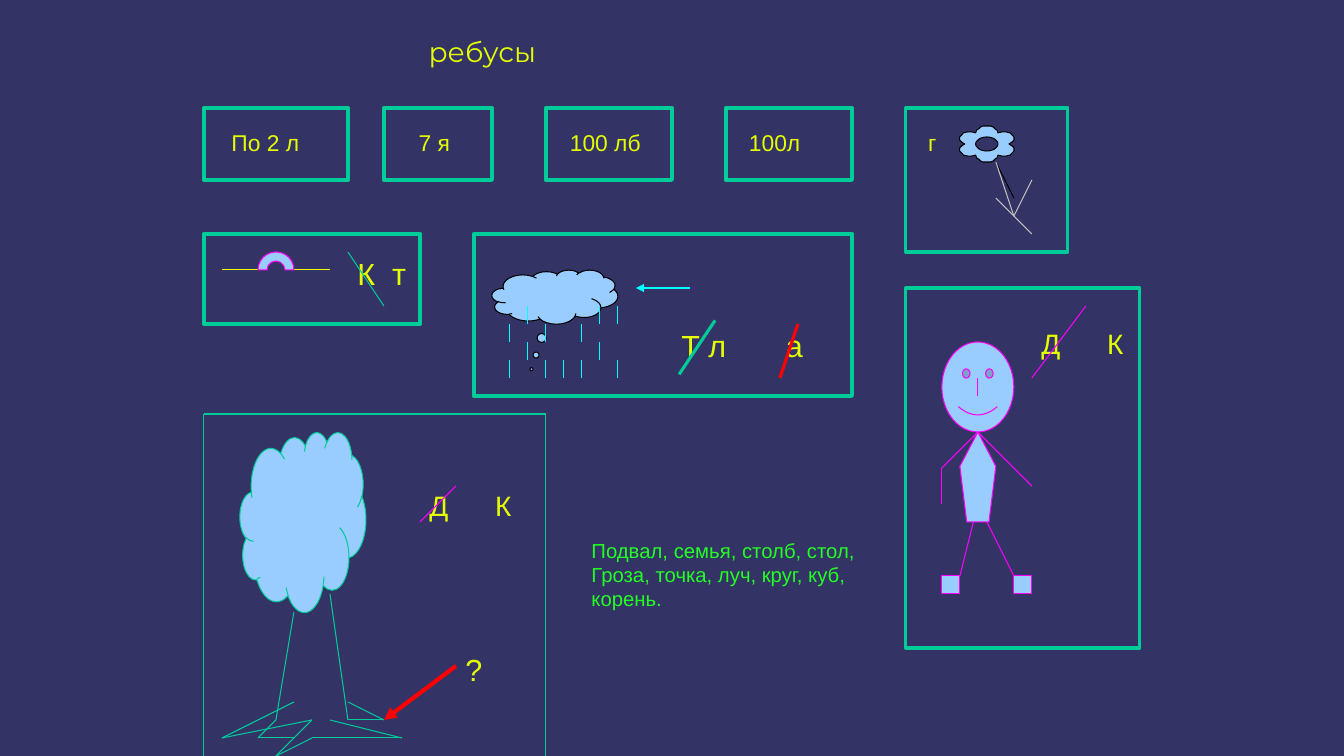
from dataclasses import dataclass

from lxml import etree
from pptx import Presentation
from pptx import util as u
from pptx.dml.color import RGBColor
from pptx.enum import shapes, text
from pptx.oxml.ns import qn

STEP = 19.05 / 42
LEFT = 5.14


@dataclass(frozen=True)
class Theme:
    back: str = "333366"
    teal: str = "00CC99"
    blue: str = "99CCFF"
    pink: str = "FF00FF"
    lime: str = "E6FF00"
    green: str = "23FF23"
    cyan: str = "00FFFF"
    yellow: str = "FFFF00"
    gray: str = "C0C0C0"
    black: str = "000000"
    red: str = "FF0000"
    font: str = "Arial"
    head: str = "Montserrat"
    big: float = 21.8
    mid: float = 20
    label: float = 16.3
    small: float = 14.5
    thin: float = 0.75
    bold: float = 2.25
    thick: float = 3


def rgb(code):
    return RGBColor.from_string(code)


def across(col):
    return u.Cm(LEFT + col * STEP)


def down(row):
    return u.Cm(row * STEP)


def span(count):
    return u.Cm(count * STEP)


class Board:
    def __init__(self, slide, theme):
        self.slide = slide
        self.theme = theme
        fill = slide.background.fill
        fill.solid()
        fill.fore_color.rgb = rgb(theme.back)

    def paint(self, item, fill, color, width):
        item.shadow.inherit = False
        if fill:
            item.fill.solid()
            item.fill.fore_color.rgb = rgb(fill)
        else:
            item.fill.background()
        item.line.color.rgb = rgb(color)
        item.line.width = u.Pt(width)

    def shape(self, kind, col, row, wide, high, color, fill=None, width=None):
        item = self.slide.shapes.add_shape(
            kind, across(col), down(row), span(wide), span(high))
        self.paint(item, fill, color, width or self.theme.thin)
        return item

    def frame(self, col, row, wide, high, width):
        self.shape(shapes.MSO_SHAPE.RECTANGLE, col, row, wide, high,
                   self.theme.teal, width=width)

    def line(self, start, end, color, width=None, arrow=False):
        item = self.slide.shapes.add_connector(
            shapes.MSO_CONNECTOR.STRAIGHT, across(start[0]), down(start[1]),
            across(end[0]), down(end[1]))
        item.line.color.rgb = rgb(color)
        item.line.width = u.Pt(width or self.theme.thin)
        props = item._element.spPr
        if arrow:
            etree.SubElement(props.find(qn("a:ln")), qn("a:tailEnd"), type="triangle")
        etree.SubElement(props, qn("a:effectLst"))

    def lines(self, pairs, color):
        for start, end in pairs:
            self.line(start, end, color)

    def outline(self, rings, color, fill):
        first, *rest = [[(across(x), down(y)) for x, y in ring] for ring in rings]
        build = self.slide.shapes.build_freeform(*first[0])
        build.add_line_segments(first[1:], close=True)
        for ring in rest:
            build.move_to(*ring[0])
            build.add_line_segments(ring[1:], close=True)
        self.paint(build.convert_to_shape(), fill, color, self.theme.thin)

    def text(self, words, col, row, wide=4, high=2, size=None, color=None,
             font=None, lead=0.98):
        box = self.slide.shapes.add_textbox(
            across(col), down(row), span(wide), span(high)).text_frame
        box.word_wrap = True
        box.vertical_anchor = text.MSO_ANCHOR.TOP
        box.margin_left = box.margin_right = u.Cm(0.24)
        box.margin_top = box.margin_bottom = u.Cm(0.11)
        box.text = words
        for para in box.paragraphs:
            para.line_spacing = lead
            para.font.size = u.Pt(size or self.theme.big)
            para.font.name = font or self.theme.font
            para.font.color.rgb = rgb(color or self.theme.lime)


def frames(board):
    t = board.theme
    for col, wide in ((0, 8), (10, 6), (19, 7), (29, 7)):
        board.frame(col, 6, wide, 4, t.thick)
    board.frame(39, 6, 9, 8, t.bold)
    board.frame(0, 13, 12, 5, t.thick)
    board.frame(15, 13, 21, 9, t.thick)
    board.frame(39, 16, 13, 20, t.bold)
    board.lines((((0, 23), (19, 23)), ((0, 23), (0, 42)), ((19, 23), (19, 42))), t.teal)


def flower(board):
    t = board.theme
    arc = [(1.23, 0), (1.4, 0.11), (1.51, 0.22), (1.51, 0.39), (1.4, 0.5),
           (1.29, 0.62), (1.06, 0.67), (0.84, 0.67), (0.62, 0.62),
           (0.56, 0.78), (0.45, 0.84), (0.34, 0.95), (0.22, 1), (0, 1)]
    hole = [(0.62, 0), (0.6, 0.1), (0.52, 0.2), (0.38, 0.31), (0.2, 0.37), (0, 0.39)]
    rings = []
    for part in (arc, hole):
        half = part + [(-x, y) for x, y in part[-2::-1]]
        ring = half + [(x, -y) for x, y in half[-2:0:-1]]
        rings.append([(43.5 + x, 8 + y) for x, y in ring])
    board.outline(rings, t.black, t.blue)
    board.line((44, 9), (45, 11), t.black)
    board.lines((((44, 9), (45, 12)), ((45, 12), (46, 10)), ((44, 11), (46, 13))), t.gray)


def arch(board):
    t = board.theme
    board.lines((((1, 15), (3, 15)), ((5, 15), (7, 15))), t.yellow)
    board.shape(shapes.MSO_SHAPE.BLOCK_ARC, 3, 14, 2, 2, t.pink, t.blue)
    board.text("К", 8, 14)
    board.text("т", 9.93, 14)
    board.line((8, 14), (10, 17), t.teal)


def storm(board):
    t = board.theme
    cloud = board.shape(shapes.MSO_SHAPE.CLOUD_CALLOUT, 16, 15, 7, 3, t.black, t.blue)
    cloud.adjustments[0] = -0.186
    cloud.adjustments[1] = 1.337
    rain = {17: (18, 22, 23), 18: (17, 19, 21), 19: (18, 22), 20: (17, 19, 20, 21, 23)}
    for row, cols in rain.items():
        board.lines([((col, row), (col, row + 1)) for col in cols], t.cyan)
    board.line((27, 16), (24, 16), t.cyan, arrow=True)
    board.text("Т л", 26, 18)
    board.text("а", 31.8, 18)
    board.line((28.4, 17.8), (26.4, 20.8), t.teal, t.bold)
    board.line((33, 18), (32, 21), t.red, t.bold)


def letters(board, col, row):
    board.text("Д", col, row, size=board.theme.mid)
    board.text("К", col + 3.65, row, size=board.theme.mid)


def person(board):
    t = board.theme
    kind = shapes.MSO_SHAPE
    board.shape(kind.SMILEY_FACE, 41, 19, 4, 5, t.pink, t.blue)
    board.lines((((43, 22), (43, 21)), ((43, 24), (41, 26)), ((41, 26), (41, 28)),
                 ((43, 24), (46, 27)), ((43, 28), (42, 32)), ((43, 28), (45, 32))), t.pink)
    for col in (41, 45):
        board.shape(kind.RECTANGLE, col, 32, 1, 1, t.pink, t.blue)
    board.shape(kind.REGULAR_PENTAGON, 42, 24, 2, 5, t.pink, t.blue)
    letters(board, 46, 18)
    board.line((49, 17), (46, 21), t.pink)


def tree(board):
    t = board.theme
    board.shape(shapes.MSO_SHAPE.CLOUD, 2, 24, 7, 10, t.teal, t.blue)
    board.lines((((5, 34), (4, 40)), ((7, 33), (8, 40)), ((5, 39), (1, 41)),
                 ((7, 40), (11, 41)), ((1, 41), (6, 40)), ((6, 41), (11, 41)),
                 ((6, 40), (5, 41)), ((6, 41), (4, 42)), ((5, 41), (4, 42)),
                 ((8, 39), (10, 40)), ((8, 40), (10, 40)), ((4, 40), (3, 41)),
                 ((3, 41), (5, 41))), t.teal)
    letters(board, 12, 27)
    board.line((14, 27), (12, 29), t.pink)
    board.line((14, 37), (10, 40), t.red, t.thick, arrow=True)
    board.text("?", 14, 36)


def main():
    deck = Presentation()
    deck.slide_width, deck.slide_height = u.Cm(33.87), u.Cm(19.05)
    board = Board(deck.slides.add_slide(deck.slide_layouts[6]), Theme())
    t = board.theme
    board.text("ребусы", 11.95, 2, wide=24, size=t.mid, font=t.head, lead=0.83)
    for words, col in (("По 2 л", 1), ("7 я", 11.4), ("100 лб", 19.8),
                       ("100л", 29.75), ("г", 39.7)):
        board.text(words, col, 7, wide=6, size=t.label)
    for draw in (frames, flower, arch, storm, person, tree):
        draw(board)
    board.text("Подвал, семья, столб, стол,\nГроза, точка, луч, круг, куб, корень.",
               21, 29.75, wide=17, high=5.7, size=t.small, color=t.green)
    deck.save("out.pptx")


if __name__ == "__main__":
    main()
